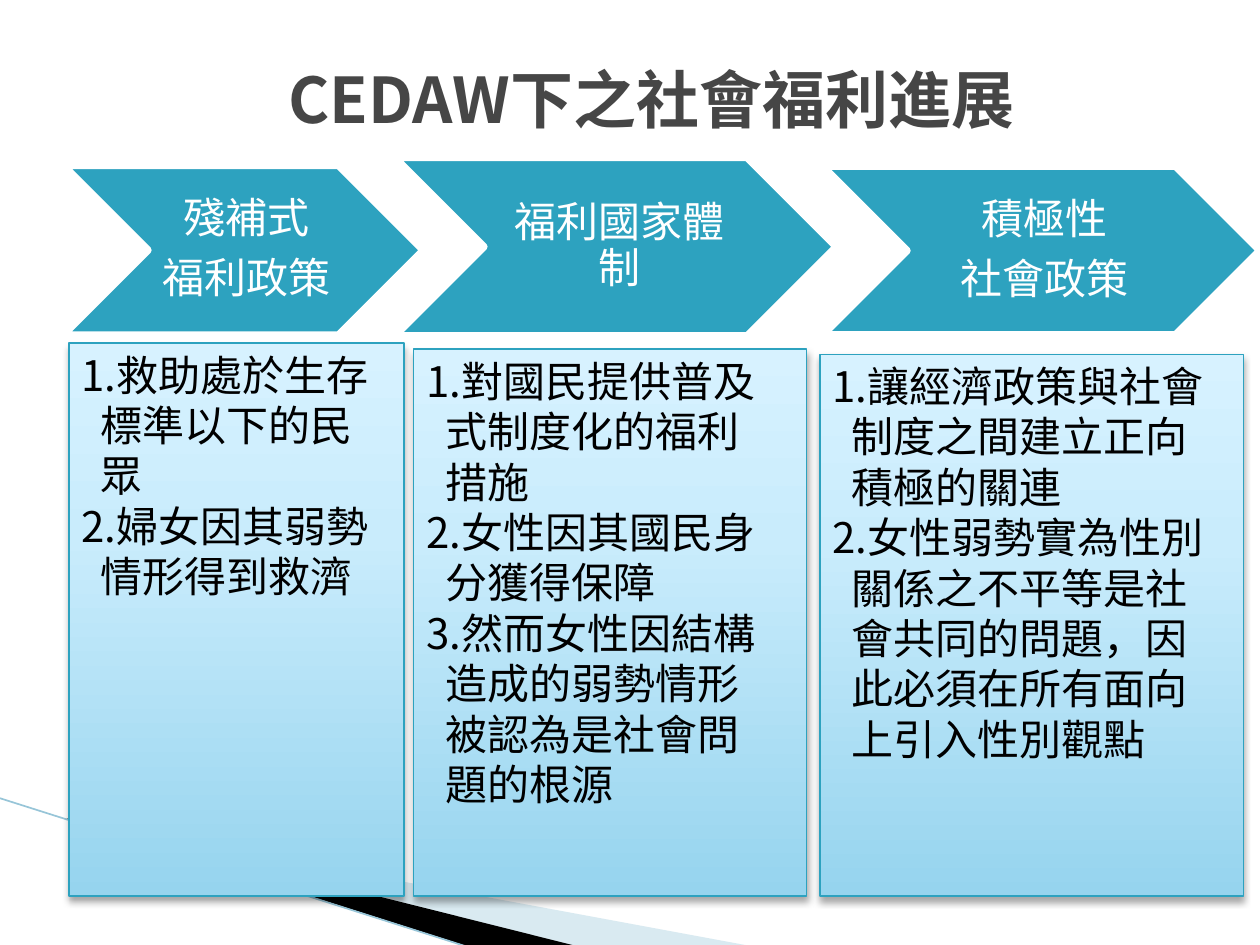
"""Build a slide on the progress of social welfare under CEDAW."""
from lxml.etree import SubElement as Sub
from pptx import Presentation
from pptx.dml.color import RGBColor as Rgb
from pptx.enum.shapes import MSO_CONNECTOR as Link, MSO_SHAPE as Kind
from pptx.enum.text import MSO_ANCHOR as Anchor, PP_ALIGN as Align
from pptx.oxml.ns import qn
from pptx.util import Pt

FONT = "Noto Sans CJK SC"
INK = {
    "title": "464646", "text": "000000", "white": "FFFFFF",
    "teal": "2DA2BF", "pale": "A0CBDC", "black": "000000", "line": "97C5D8",
}
GRAD = [(0, "96D4EE"), (65, "C9ECFC"), (100, "D7F2FF")]
HEADS = [
    ((36, 94.5, 206, 97), ["殘補式", "福利政策"]),
    ((225.5, 90, 252.5, 102), ["福利國家體制"]),
    ((470, 95, 250, 96.5), ["積極性", "社會政策"]),
]
CARDS = [
    ((39.5, 196, 191.5, 316), [
        "1.救助處於生存\v標準以下的民\v眾",
        "2.婦女因其弱勢\v情形得到救濟",
    ]),
    ((236.5, 199.5, 224.5, 312.5), [
        "1.對國民提供普及\v式制度化的福利\v措施",
        "2.女性因其國民身\v分獲得保障",
        "3.然而女性因結構\v造成的弱勢情形\v被認為是社會問\v題的根源",
    ]),
    ((468.5, 202.5, 242, 309.5), [
        "1.讓經濟政策與社會\v制度之間建立正向\v積極的關連",
        "2.女性弱勢實為性別\v關係之不平等是社\v會共同的問題，因\v此必須在所有面向\v上引入性別觀點",
    ]),
]


def tint(name):
    return Rgb.from_string(INK[name])


def write(shape, paras, size=24, ink="text", bold=False, align=Align.LEFT,
          anchor=Anchor.TOP, hang=0, lead=1.0, after=0, pad=(7.2, 3.6, 7.2, 3.6)):
    frame = shape.text_frame
    frame.word_wrap = True
    frame.vertical_anchor = anchor
    (frame.margin_left, frame.margin_top,
     frame.margin_right, frame.margin_bottom) = map(Pt, pad)
    for i, text in enumerate(paras):
        para = frame.add_paragraph() if i else frame.paragraphs[0]
        para.text = text
        para.alignment = align
        para.line_spacing = lead
        para.space_before = Pt(0)
        para.space_after = Pt(after)
        if hang:
            props = para._p.get_or_add_pPr()
            props.set("marL", str(Pt(hang)))
            props.set("indent", str(-Pt(hang)))
        for run in para.runs:
            font = run.font
            font.name, font.size, font.bold = FONT, Pt(size), bold
            font.color.rgb = tint(ink)
            Sub(run._r.get_or_add_rPr(), qn("a:ea"), typeface=FONT)


def stain(node, code, alpha=None):
    color = Sub(node, qn("a:srgbClr"), val=code)
    if alpha:
        Sub(color, qn("a:alpha"), val=str(alpha * 1000))


def block(slide, kind, area, line, width):
    shape = slide.shapes.add_shape(kind, *map(Pt, area))
    shape.shadow.inherit = False
    shape.line.color.rgb = tint(line)
    shape.line.width = Pt(width)
    return shape


def head(slide, area, paras):
    shape = block(slide, Kind.CHEVRON, area, "white", 4.33)
    shape.fill.solid()
    shape.fill.fore_color.rgb = tint("teal")
    write(shape, paras, ink="white", align=Align.CENTER, anchor=Anchor.MIDDLE,
          lead=0.9, after=8.4, pad=(7.2, 3, 3, 3))


def card(slide, area, paras):
    shape = block(slide, Kind.RECTANGLE, area, "teal", 0.75)
    shape.fill.gradient()
    shape.fill.gradient_angle = 90
    props = shape._element.spPr
    stops = props.find(".//" + qn("a:gsLst"))
    for stop in list(stops):
        stops.remove(stop)
    for pos, code in GRAD:
        stain(Sub(stops, qn("a:gs"), pos=str(pos * 1000)), code)
    shade = Sub(props.find(qn("a:effectLst")), qn("a:outerShdw"),
                blurRad=str(Pt(4)), dist=str(Pt(3)), dir="5400000",
                rotWithShape="0")
    stain(shade, INK["black"], 35)
    write(shape, paras, hang=11)


def wedge(slide, points, ink, alpha=None):
    pen = slide.shapes.build_freeform(*map(Pt, points[0]))
    pen.add_line_segments([tuple(map(Pt, p)) for p in points[1:]])
    shape = pen.convert_to_shape()
    shape.shadow.inherit = False
    shape.line.fill.background()
    shape.fill.solid()
    shape.fill.fore_color.rgb = tint(ink)
    if alpha:
        color = shape._element.spPr.find(".//" + qn("a:srgbClr"))
        Sub(color, qn("a:alpha"), val=str(alpha * 1000))


def rule(slide, ends, ink, width):
    line = slide.shapes.add_connector(Link.STRAIGHT, *map(Pt, ends))
    line.line.color.rgb = tint(ink)
    line.line.width = Pt(width)
    Sub(line._element.spPr, qn("a:effectLst"))


def name(slide, area, text):
    title = slide.shapes.title
    title.left, title.top, title.width, title.height = map(Pt, area)
    write(title, [text], size=36, ink="title", bold=True, anchor=Anchor.MIDDLE)


def main():
    deck = Presentation()
    deck.slide_width, deck.slide_height = Pt(720), Pt(540)
    slide = deck.slides.add_slide(deck.slide_layouts[5])
    wedge(slide, [(39.5, 468.5), (428.5, 540.5), (328.5, 540.5), (39.5, 468)],
          "pale", 40)
    wedge(slide, [(38, 467.5), (329, 540.5), (268, 541), (39, 468)], "black")
    rule(slide, (-0.5, 456, 267, 541), "line", 0.95)
    name(slide, (157.5, 28, 450, 56), "CEDAW下之社會福利進展")
    for area, paras in HEADS:
        head(slide, area, paras)
    for area, paras in CARDS:
        card(slide, area, paras)
    deck.save("out.pptx")


if __name__ == "__main__":
    main()
